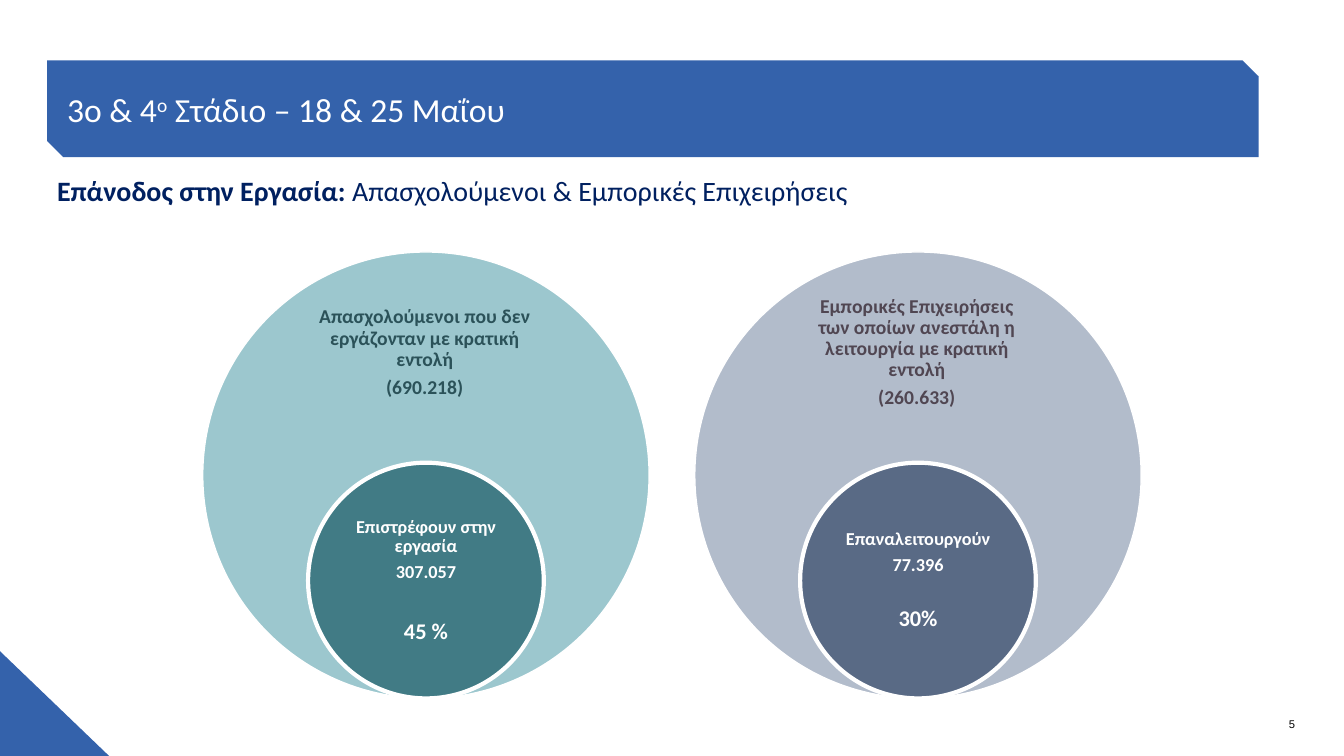
from pptx import Presentation
from pptx.dml.color import RGBColor
from pptx.enum.shapes import MSO_SHAPE
from pptx.enum.text import MSO_ANCHOR, PP_ALIGN
from pptx.util import Cm, Pt

OVAL, WEDGE = MSO_SHAPE.OVAL, MSO_SHAPE.RIGHT_TRIANGLE
SNIP = MSO_SHAPE.SNIP_2_DIAG_RECTANGLE
TOP, MIDDLE, BOTTOM = MSO_ANCHOR.TOP, MSO_ANCHOR.MIDDLE, MSO_ANCHOR.BOTTOM
LEFT, CENTER, RIGHT = PP_ALIGN.LEFT, PP_ALIGN.CENTER, PP_ALIGN.RIGHT

COLORS = {
    "blue": "3462AB", "navy": "002060", "white": "FFFFFF", "black": "000000",
    "aqua": "9CC7CE", "teal": "417B85", "pine": "2B5259",
    "mist": "B2BCCB", "slate": "596A85", "plum": "504652",
}


def color(name):
    return RGBColor.from_string(COLORS[name])


class Page:
    """Holds the slide and its text style."""

    def __init__(self, slide, face="Calibri"):
        self.slide = slide
        self.face = face

    def shape(self, kind, box, fill, edge=0):
        item = self.slide.shapes.add_shape(kind, *map(Cm, box))
        item.shadow.inherit = False
        item.fill.solid()
        item.fill.fore_color.rgb = color(fill)
        if edge:
            item.line.color.rgb = color("white")
            item.line.width = Pt(edge)
        else:
            item.line.fill.background()
        return item

    def text(self, box, anchor=TOP, pad=(0.25, 0.13)):
        item = self.slide.shapes.add_textbox(*map(Cm, box))
        self.frame(item, anchor, pad)
        return item

    def frame(self, item, anchor, pad):
        frame = item.text_frame
        frame.word_wrap = True
        frame.vertical_anchor = anchor
        frame.margin_left = frame.margin_right = Cm(pad[0])
        frame.margin_top = frame.margin_bottom = Cm(pad[1])

    def style(self, para, size, tint, bold=None, align=LEFT, face=None):
        para.alignment = align
        font = para.font
        font.name = face or self.face
        font.size = Pt(size)
        font.color.rgb = color(tint)
        if bold is not None:
            font.bold = bold

    def label(self, box, lines, tint):
        """Centred bold lines, each given as text, size and space before."""
        frame = self.text(box, MIDDLE, (0.27, 0.27)).text_frame
        for i, (words, size, gap) in enumerate(lines):
            para = frame.paragraphs[0] if i == 0 else frame.add_paragraph()
            para.line_spacing = 0.9
            if gap:
                para.space_before = Pt(gap)
            para.add_run().text = words
            self.style(para, size, tint, True, CENTER)


def main():
    deck = Presentation()
    deck.slide_width, deck.slide_height = Cm(33.87), Cm(19.05)
    page = Page(deck.slides.add_slide(deck.slide_layouts[6]))

    # Corner wedge
    page.shape(WEDGE, (0, 16.41, 2.75, 2.64), "blue")

    # Title banner
    banner = page.shape(SNIP, (1.19, 1.52, 30.53, 2.44), "blue")
    page.frame(banner, MIDDLE, (0.3, 0.05))
    para = banner.text_frame.paragraphs[0]
    for words, lift in (("3o & 4", 0), ("ο", 30000), (" Στάδιο – 18 & 25 Μαΐου", 0)):
        run = para.add_run()
        run.text = words
        if lift:
            run._r.get_or_add_rPr().set("baseline", str(lift))
    page.style(para, 24, "white")

    # Subtitle
    para = page.text((1.19, 4.24, 29.8, 1.11)).text_frame.paragraphs[0]
    for words, bold in (("Επάνοδος στην Εργασία: ", True),
                        ("Απασχολούμενοι & Εμπορικές Επιχειρήσεις", False)):
        run = para.add_run()
        run.text = words
        run.font.bold = bold
    page.style(para, 20, "navy")

    # Nested circles: whole group outside, returning part inside
    pairs = [
        ("aqua", "teal", "pine",
         "Απασχολούμενοι που δεν εργάζονταν με κρατική εντολή", "(690.218)",
         "Επιστρέφουν στην εργασία", "307.057", "45 %", 26.5),
        ("mist", "slate", "plum",
         "Εμπορικές Επιχειρήσεις των οποίων ανεστάλη η λειτουργία με κρατική εντολή",
         "(260.633)", "Επαναλειτουργούν", "77.396", "30%", 23),
    ]
    big, small, top = 11.25, 5.94, 6.35
    for i, (pale, deep, ink, whole, total, part, count, share, gap) in enumerate(pairs):
        left = 5.11 + i * 12.4
        mid = left + big / 2
        page.shape(OVAL, (left, top, big, big), pale, 1)
        page.label((mid - 2.98, 7.39, 5.9, 3.0),
                   [(whole, 14, 0), (total, 14, 5)], ink)
        page.shape(OVAL, (mid - small / 2, top + big - small, small, small), deep, 3)
        page.label((mid - 2.11, 13.14, 4.22, 2.98),
                   [(part, 13, 0), (count, 13, 4.5), (share, 16, gap)], "white")

    # Page number
    para = page.text((27.74, 18.03, 4.9, 0.38), BOTTOM, (0, 0)).text_frame.paragraphs[0]
    para.add_run().text = "5"
    page.style(para, 8, "black", align=RIGHT, face="Arial")

    deck.save("out.pptx")


if __name__ == "__main__":
    main()
